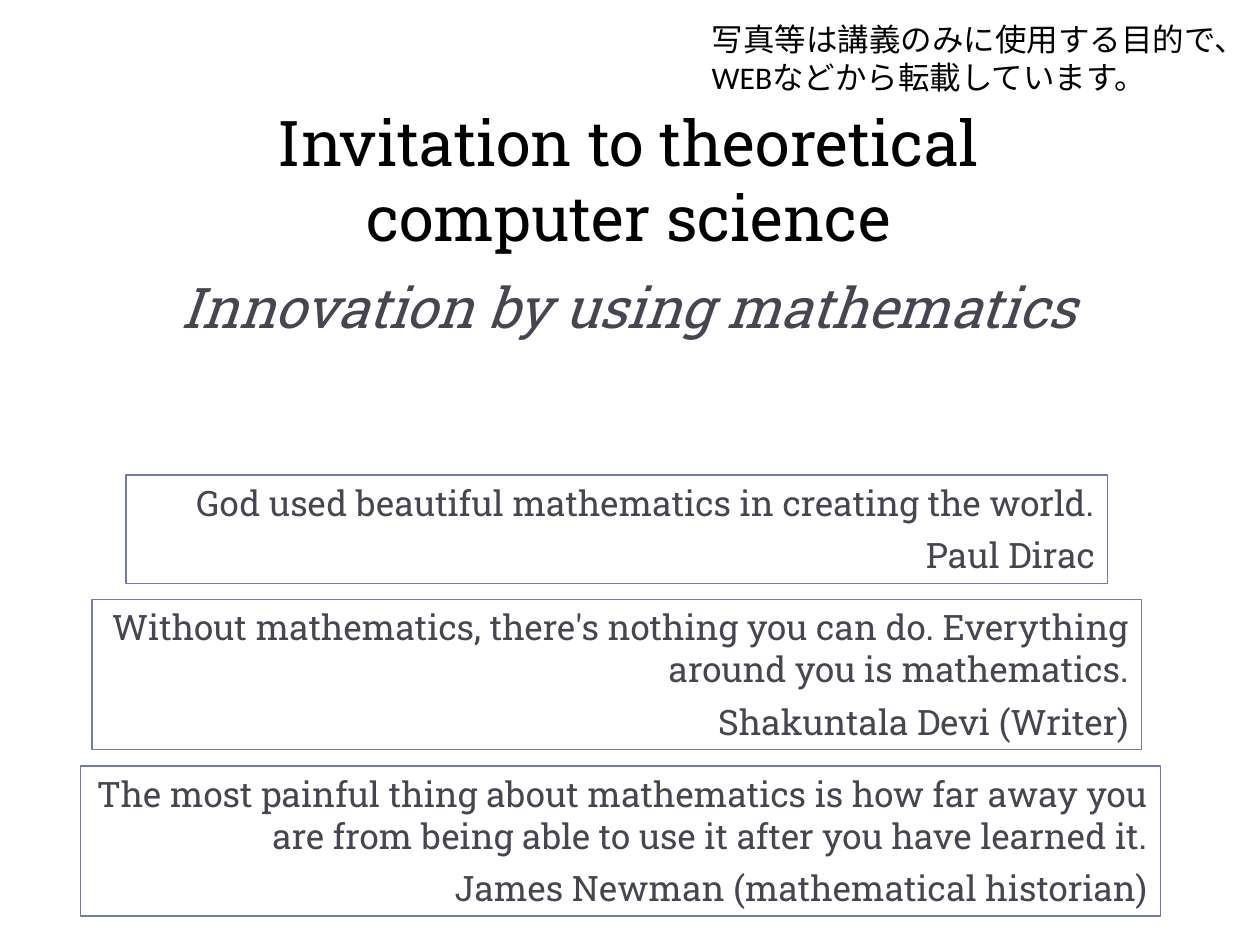
from pptx import Presentation
from pptx.dml.color import RGBColor
from pptx.enum.shapes import MSO_SHAPE as Shape
from pptx.enum.text import MSO_ANCHOR as Anchor, MSO_AUTO_SIZE as AutoSize, PP_ALIGN as Align
from pptx.util import Inches, Pt

BLACK = RGBColor(0x00, 0x00, 0x00)
SLATE = RGBColor(0x46, 0x46, 0x53)
BORDER = RGBColor(0x72, 0x7C, 0xA3)
SLAB = "Roboto Slab"

# left, top, width, height, quotation, author
QUOTES = [
    (1.00, 3.77, 7.79, 0.86,
     "God used beautiful mathematics in creating the world.",
     "Paul Dirac"),
    (0.73, 4.76, 8.33, 1.19,
     "Without mathematics, there's nothing you can do. Everything around you is mathematics.",
     "Shakuntala Devi (Writer)"),
    (0.64, 6.08, 8.57, 1.19,
     "The most painful thing about mathematics is how far away you are from being able "
     "to use it after you have learned it.",
     "James Newman (mathematical historian)"),
]


def write(box, lines, size, color, align, font=SLAB, italic=False, before=0):
    """Fill a shape with one paragraph per line, anchored at the top."""
    frame = box.text_frame
    frame.word_wrap = True
    frame.auto_size = AutoSize.NONE
    frame.vertical_anchor = Anchor.TOP
    for index, line in enumerate(lines):
        para = frame.add_paragraph() if index else frame.paragraphs[0]
        para.alignment = align
        para.space_before = Pt(before)
        span = para.add_run()
        span.text = line
        span.font.name = font
        span.font.size = Pt(size)
        span.font.italic = italic
        span.font.color.rgb = color


def add_title(page, text):
    title = page.shapes.title
    title.left, title.top = Inches(1.24), Inches(0.77)
    title.width, title.height = Inches(7.5), Inches(1.08)
    write(title, [text], 36, BLACK, Align.CENTER)


def add_label(page, left, top, width, height, text, *style, **options):
    box = page.shapes.add_textbox(Inches(left), Inches(top), Inches(width), Inches(height))
    write(box, [text], *style, **options)


def add_quote(page, left, top, width, height, quotation, author):
    box = page.shapes.add_shape(
        Shape.RECTANGLE, Inches(left), Inches(top), Inches(width), Inches(height))
    box.shadow.inherit = False
    box.fill.background()
    box.line.color.rgb = BORDER
    box.line.width = Pt(0.75)
    write(box, [quotation, author], 20, SLATE, Align.RIGHT, before=6)


def main():
    deck = Presentation()
    deck.slide_width, deck.slide_height = Inches(10), Inches(7.5)
    page = deck.slides.add_slide(deck.slide_layouts[5])

    # Heading and subtitle
    add_title(page, "Invitation to theoretical computer science")
    add_label(page, 1.24, 2.11, 7.5, 0.79, "Innovation by using mathematics",
              32, SLATE, Align.CENTER, italic=True, before=6)

    # Usage notice in the top right corner
    add_label(page, 5.55, 0.11, 4.25, 0.71,
              "写真等は講義のみに使用する目的で、WEBなどから転載しています。",
              18, BLACK, Align.LEFT, font="Calibri")

    # Framed quotations
    for quote in QUOTES:
        add_quote(page, *quote)

    deck.save("out.pptx")


if __name__ == "__main__":
    main()
